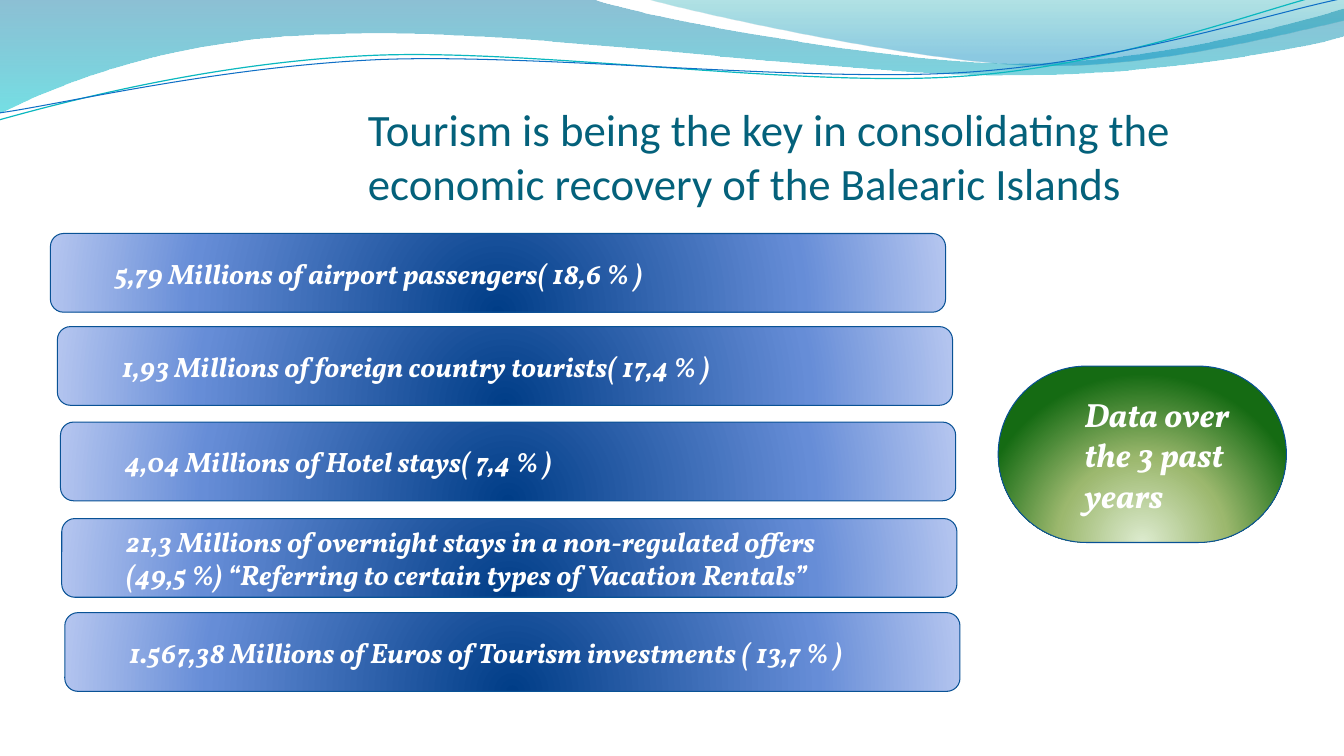
from math import cos, radians, sin

from lxml.etree import SubElement
from pptx import Presentation
from pptx.dml.color import RGBColor
from pptx.enum.shapes import MSO_SHAPE as Preset
from pptx.enum.text import MSO_ANCHOR as Anchor, MSO_AUTO_SIZE as AutoSize, PP_ALIGN as Align
from pptx.oxml.ns import qn
from pptx.util import Pt

COLORS = {
    "title": "04617B", "text": "FFFFFF", "outline": "095295",
    "wave_blue": "0074A1", "wave_cyan": "00C6CF", "wave_teal": "00A1A9", "wave_sky": "008BBF",
    "line_teal": "0AB8BF", "line_blue": "0F6FC6",
    "navy": "003D87", "blue": "668DD7", "pale_blue": "B3C4EF",
    "pale_green": "DDEBCF", "olive": "9CB86E", "green": "156B13",
}
WAVE_TILT = 2.7  # degrees, counter-clockwise

# Gradient stops: position in percent, colour, opacity in percent
BAR_STOPS = [(0, "navy", 100), (68, "blue", 100), (100, "pale_blue", 100)]
NOTE_STOPS = [(0, "pale_green", 100), (50, "olive", 100), (100, "green", 100)]

# Outlines: a start point, then segments of one point (line) or three (Bézier curve)
WAVES = [
    ([(0, "wave_blue", 45), (100, "wave_cyan", 55)], (0, 0), [
        [(422.6, -0.7)],
        [(456.5, 12.2), (637.2, 45.4), (727.9, 45.4)],
        [(819.4, 45.4), (920.2, 18.7), (959.8, 6.5)],
        [(961.2, 25.9)],
        [(943.9, 31.7), (835.2, 54.7), (715.7, 54)],
        [(596.9, 54), (366.5, 20.2), (247, 24.5)],
        [(123.8, 25.9), (43.9, 59.8), (-0.7, 81.4)],
        [(0, 0)]]),
    ([(0, "wave_teal", 30), (80, "wave_sky", 45)], (460.1, -0.7), [
        [(488.9, 7.9), (654.5, 44.6), (738, 46.8)],
        [(821.5, 49.7), (923, 23), (959.8, 15.1)],
        [(959.8, 0)],
        [(460.1, -0.7)]]),
]
# Colour, width, centre, then the outline as it lies on the slide
WAVE_LINES = [
    ("line_teal", 0.85, (478.8, 41.4), (-0.7, 85.7), [
        [(46.1, 72.7), (151.9, 44.6), (265.7, 39.6)],
        [(379.4, 34.6), (568.8, 62.6), (684, 54.7)],
        [(799.2, 47.5), (901.4, 5.8), (958.3, -7.2)]]),
    ("line_blue", 0.75, (480.2, 42.5), (0, 80.6), [
        [(45.4, 74.2), (157, 47.5), (272.2, 42.5)],
        [(386.6, 38.2), (573.1, 59), (687.6, 51.8)],
        [(802.8, 44.6), (903.6, 10.1), (960.5, -1.4)]]),
]
BARS = [
    (36, 166.8, "5,79 Millions of airport passengers( 18,6 % )"),
    (41, 233.3, "1,93 Millions of foreign country tourists( 17,4 % )"),
    (43.2, 301.5, "4,04 Millions of Hotel stays( 7,4 % )"),
    (44.1, 370.4, "21,3 Millions of overnight stays in a non-regulated offers\v"
                  "(49,5 %) “Referring to certain types of Vacation Rentals”"),
    (46.3, 437.6, "1.567,38 Millions of Euros of Tourism investments ( 13,7 % )"),
]


def rgb(name):
    return RGBColor.from_string(COLORS[name])


def turn(point, center, degrees):
    """Turn a point clockwise around a centre."""
    angle = radians(degrees)
    x, y = point[0] - center[0], point[1] - center[1]
    return (center[0] + x * cos(angle) - y * sin(angle),
            center[1] + x * sin(angle) + y * cos(angle))


def set_gradient(shape, stops, center=None):
    """Fill from top to bottom, or in circles around a height given in percent."""
    shape.fill.background()
    properties = shape.element.spPr
    gradient = SubElement(properties, qn("a:gradFill"), rotWithShape="1")
    properties.replace(properties.find(qn("a:noFill")), gradient)
    stop_list = SubElement(gradient, qn("a:gsLst"))
    for position, name, opacity in stops:
        stop = SubElement(stop_list, qn("a:gs"), pos=str(position * 1000))
        color = SubElement(stop, qn("a:srgbClr"), val=COLORS[name])
        if opacity < 100:
            SubElement(color, qn("a:alpha"), val=str(opacity * 1000))
    if center is None:
        SubElement(gradient, qn("a:lin"), ang="5400000", scaled="0")
    else:
        circle = SubElement(gradient, qn("a:path"), path="circle")
        SubElement(circle, qn("a:fillToRect"), l="50000", t=str(center * 1000),
                   r="50000", b=str((100 - center) * 1000))


class SlideBuilder:
    title_font = "Calibri"
    body_font = "Vollkorn"

    def __init__(self, presentation):
        self.slide = presentation.slides.add_slide(presentation.slide_layouts[5])
        self.shapes = self.slide.shapes

    def outline(self, start, segments, close):
        """Add a freeform, joining each three-point segment into one curve."""
        builder = self.shapes.build_freeform(Pt(start[0]), Pt(start[1]))
        points = [point for segment in segments for point in segment]
        builder.add_line_segments([(Pt(x), Pt(y)) for x, y in points], close)
        shape = builder.convert_to_shape()
        shape.shadow.inherit = False
        steps = iter(list(shape.element.iter(qn("a:lnTo"))))
        for segment in segments:
            first, *others = [next(steps) for _ in segment]
            if others:
                first.tag = qn("a:cubicBezTo")
                for step in others:
                    first.append(step[0])
                    step.getparent().remove(step)
        return shape

    def wave(self, stops, start, segments):
        shape = self.outline(start, segments, True)
        set_gradient(shape, stops)
        shape.line.fill.background()

    def wave_line(self, color, width, center, start, segments):
        level = [[turn(point, center, WAVE_TILT) for point in segment] for segment in segments]
        shape = self.outline(turn(start, center, WAVE_TILT), level, False)
        shape.rotation = -WAVE_TILT
        shape.fill.background()
        shape.line.color.rgb = rgb(color)
        shape.line.width = Pt(width)

    def title(self, text, left, top, width, height):
        title = self.shapes.title
        title.left, title.top, title.width, title.height = map(Pt, (left, top, width, height))
        title.element.getparent().append(title.element)  # in front of the waves
        frame = title.text_frame
        frame.text = text
        frame.word_wrap, frame.auto_size = True, AutoSize.NONE
        frame.vertical_anchor = Anchor.BOTTOM
        frame.margin_left = frame.margin_right = frame.margin_bottom = 0
        frame.margin_top = Pt(3.6)
        paragraph = frame.paragraphs[0]
        paragraph.alignment = Align.LEFT
        self.set_font(paragraph.font, self.title_font, 32, "title")

    def panel(self, text, box, stops, center, size):
        """Add a rounded, shaded panel with indented text."""
        shape = self.shapes.add_shape(Preset.ROUNDED_RECTANGLE, *map(Pt, box))
        set_gradient(shape, stops, center)
        shape.line.color.rgb = rgb("outline")
        shape.line.width = Pt(0.75)
        shape.shadow.inherit = False
        frame = shape.text_frame
        frame.word_wrap = True
        frame.vertical_anchor = Anchor.MIDDLE
        paragraph = frame.paragraphs[0]
        paragraph.text = text
        paragraph.level = 1
        paragraph.alignment = Align.LEFT
        indent = paragraph._p.get_or_add_pPr()
        indent.set("marL", str(Pt(36)))
        indent.set("indent", "0")
        self.set_font(paragraph.font, self.body_font, size, "text")
        paragraph.font.bold = paragraph.font.italic = True
        return shape

    @staticmethod
    def set_font(font, name, size, color):
        font.name, font.size = name, Pt(size)
        font.color.rgb = rgb(color)


def main():
    presentation = Presentation()
    presentation.slide_width, presentation.slide_height = Pt(960), Pt(540)
    builder = SlideBuilder(presentation)
    for wave in WAVES:
        builder.wave(*wave)
    for wave_line in WAVE_LINES:
        builder.wave_line(*wave_line)
    builder.title("Tourism is being the key in consolidating the economic recovery "
                  "of the Balearic Islands", 262.8, 48.2, 678.2, 101.5)
    for left, top, text in BARS:
        builder.panel(text, (left, top, 639.4, 56.2), BAR_STOPS, 130, 20)
    note = builder.panel("Data over the 3 past years", (713, 261.5, 205.9, 126),
                         NOTE_STOPS, 100, 24)
    note.adjustments[0] = 0.5
    presentation.save("out.pptx")


if __name__ == "__main__":
    main()
